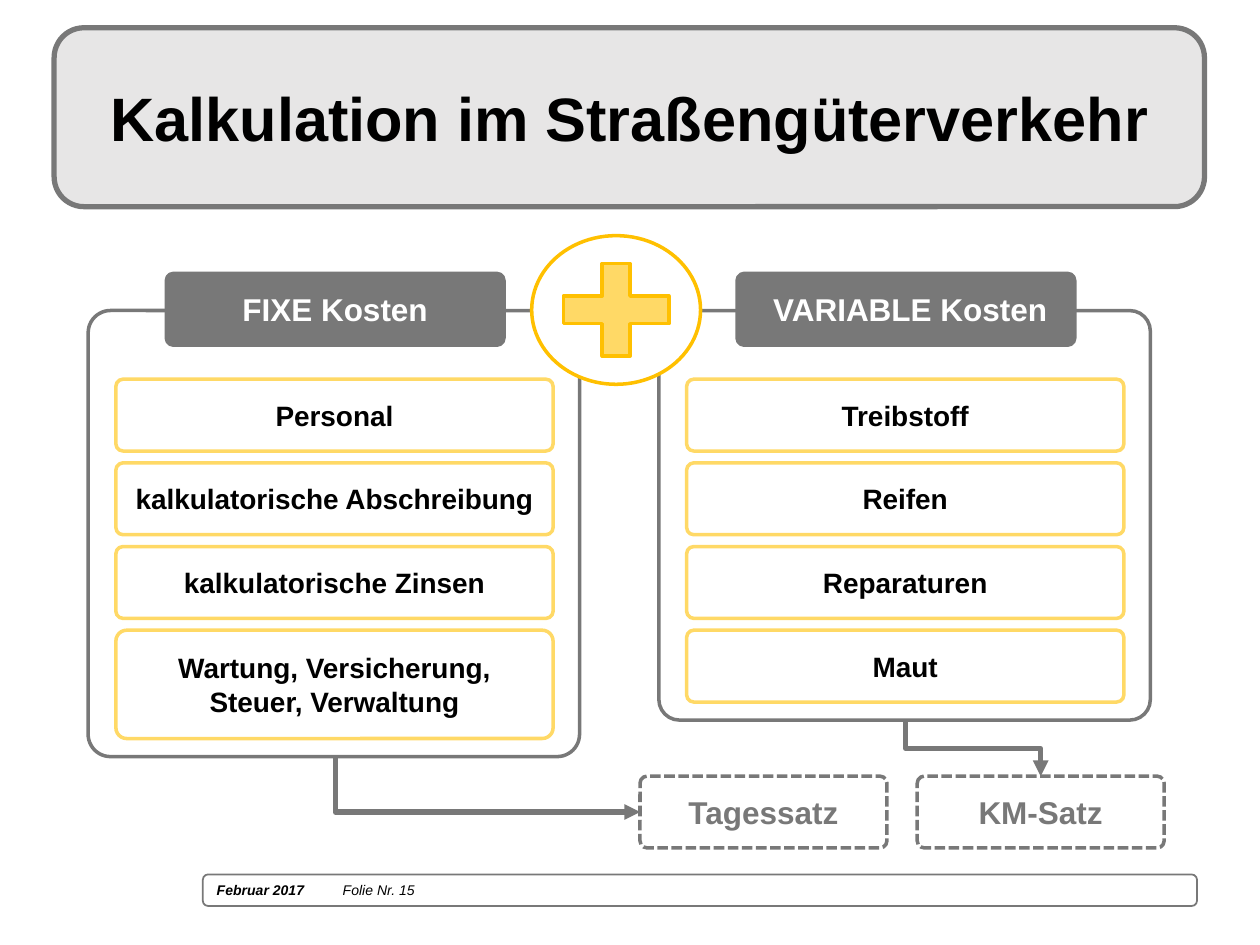
from lxml import etree
from pptx import Presentation
from pptx.dml.color import RGBColor
from pptx.enum.dml import MSO_LINE
from pptx.enum.shapes import MSO_CONNECTOR, MSO_SHAPE
from pptx.enum.text import MSO_ANCHOR, PP_ALIGN
from pptx.oxml.ns import qn
from pptx.util import Inches, Pt

WHITE = RGBColor(0xFF, 0xFF, 0xFF)
BLACK = RGBColor(0, 0, 0)
GREY = RGBColor(0x78, 0x78, 0x78)
PALE = RGBColor(0xE7, 0xE6, 0xE6)
YELLOW = RGBColor(0xFF, 0xD9, 0x66)
GOLD = RGBColor(0xFF, 0xC0, 0x00)
ROUNDED, OVAL, PLUS = (
    MSO_SHAPE.ROUNDED_RECTANGLE, MSO_SHAPE.OVAL, MSO_SHAPE.MATH_PLUS)
CENTER, LEFT, MIDDLE = PP_ALIGN.CENTER, PP_ALIGN.LEFT, MSO_ANCHOR.MIDDLE
DASHED = MSO_LINE.SQUARE_DOT
ELBOW = MSO_CONNECTOR.ELBOW

TITLE_ONLY = 5
COLUMNS, ROWS = 100, 75         # the slide as a grid of 0.1 inch cells
COLUMN_SHIFT = 45.3             # from the fixed to the variable costs
FIRST_ITEM, ITEM_STEP = 30.1, 6.64
ITEM_HEIGHT = 5.7
SMALL_CORNER, PANEL_CORNER = 0.1, 0.05


class CostSlide:
    def __init__(self):
        self.deck = Presentation()
        self.deck.slide_width, self.deck.slide_height = Inches(10), Inches(7.5)
        self.page = self.deck.slides.add_slide(
            self.deck.slide_layouts[TITLE_ONLY])
        self.font = {"name": "Arial", "bold": True}

    def across(self, columns):
        return round(self.deck.slide_width * columns / COLUMNS)

    def down(self, rows):
        return round(self.deck.slide_height * rows / ROWS)

    def area(self, left, top, width, height):
        return (self.across(left), self.down(top),
                self.across(width), self.down(height))

    def style(self, font, size, color, **values):
        for name, value in {**self.font, "size": Pt(size), **values}.items():
            setattr(font, name, value)
        font.color.rgb = color

    def box(self, place, fill=WHITE, line=GREY, weight=2, kind=ROUNDED,
            corner=None, dash=None, shapes=None):
        shapes = shapes or self.page.shapes
        box = shapes.add_shape(kind, *self.area(*place))
        box.shadow.inherit = False
        box.fill.solid()
        box.fill.fore_color.rgb = fill
        box.line.color.rgb = line
        box.line.width = Pt(weight)
        if dash:
            box.line.dash_style = dash
        if corner:
            box.adjustments[0] = corner
        return box

    def label(self, box, lines, size, color=BLACK):
        frame = box.text_frame
        for name, value in {"word_wrap": True, "vertical_anchor": MIDDLE,
                            "margin_left": Inches(0.05),
                            "margin_right": Inches(0.05)}.items():
            setattr(frame, name, value)
        for number, line in enumerate(lines):
            para = frame.add_paragraph() if number else frame.paragraphs[0]
            para.alignment = CENTER
            span = para.add_run()
            span.text = line
            self.style(span.font, size, color)

    def labelled(self, place, lines, size, color=BLACK, **look):
        box = self.box(place, corner=SMALL_CORNER, **look)
        self.label(box, lines, size, color)

    def title(self, text, place, behind):
        title = self.page.shapes.title
        title.left, title.top, title.width, title.height = self.area(*place)
        behind.element.addnext(title.element)
        self.label(title, [text], 35)

    def footer(self, place, date, number):
        box = self.box(place, weight=1)
        box.text_frame.vertical_anchor = MIDDLE
        para = box.text_frame.paragraphs[0]
        para.alignment = LEFT
        tabs = etree.SubElement(para._p.get_or_add_pPr(), qn("a:tabLst"))
        etree.SubElement(tabs, qn("a:tab"), pos=str(Inches(1)), algn="l")
        for text, bold in ((date + "\t", True), (number, False)):
            span = para.add_run()
            span.text = text
            self.style(span.font, 8, BLACK, bold=bold, italic=True)

    def elbow(self, start, end, preset):
        """Arrow that leaves downwards: a flipped elbow on a quarter turn."""
        x1, y1, x2, y2 = *start, *end
        half_long, half_short = (x2 - x1) / 2, (y2 - y1) / 2
        mid_x, mid_y = (x1 + x2) / 2, (y1 + y2) / 2
        arrow = self.page.shapes.add_connector(
            ELBOW,
            self.across(mid_x - half_short), self.down(mid_y - half_long),
            self.across(mid_x + half_short), self.down(mid_y + half_long))
        arrow.line.color.rgb = GREY
        arrow.line.width = Pt(3)
        properties = arrow.element.spPr
        frame = properties.find(qn("a:xfrm"))
        frame.set("rot", str(270 * 60000))
        frame.set("flipH", "1")
        properties.find(qn("a:prstGeom")).set("prst", preset)
        etree.SubElement(arrow.line._get_or_add_ln(), qn("a:tailEnd"),
                         type="triangle")
        etree.SubElement(properties, qn("a:effectLst"))

    def cost_column(self, shift, height, heading, items):
        self.box((7 + shift, 24.65, 39, height), corner=PANEL_CORNER)
        self.labelled((13.2 + shift, 21.7, 26.8, ITEM_HEIGHT), [heading],
                      18, WHITE, fill=GREY)
        for number, lines in enumerate(items):
            extra = 2.9 * (len(lines) - 1)
            self.labelled((9.2 + shift, FIRST_ITEM + number * ITEM_STEP,
                           34.7, ITEM_HEIGHT + extra),
                          lines, 16, line=YELLOW)

    def plus_sign(self):
        group = self.page.shapes.add_group_shape()
        self.box((42.2, 18.7, 13.4, 11.8), line=GOLD, kind=OVAL,
                 shapes=group.shapes)
        self.box((43.2, 19.6, 11.4, 10), fill=YELLOW, line=GOLD, kind=PLUS,
                 corner=0.22, shapes=group.shapes)


def main():
    slide = CostSlide()

    # Footer and title banner
    slide.footer((16.1, 69.4, 78.9, 2.5), "Februar 2017", "Folie Nr. 15")
    banner = slide.box((4.3, 2.2, 91.3, 14.2), fill=PALE, weight=3)
    slide.title("Kalkulation im Straßengüterverkehr", (5.9, 3, 88.2, 12.5),
                banner)

    # Fixed and variable costs, joined by a plus sign
    slide.cost_column(0, 35.4, "FIXE Kosten", [
        ["Personal"], ["kalkulatorische Abschreibung"],
        ["kalkulatorische Zinsen"],
        ["Wartung, Versicherung,", "Steuer, Verwaltung"]])
    slide.cost_column(COLUMN_SHIFT, 32.5, " VARIABLE Kosten", [
        ["Treibstoff"], ["Reifen"], ["Reparaturen"], ["Maut"]])
    slide.plus_sign()

    # Resulting rates
    for left, rate in ((50.8, "Tagessatz"), (72.8, "KM-Satz")):
        slide.labelled((left, 61.6, 19.6, ITEM_HEIGHT), [rate], 18, GREY,
                       dash=DASHED)
    slide.elbow((26.6, 60.1), (50.8, 64.45), "bentConnector2")
    slide.elbow((71.9, 57.2), (82.6, 61.6), "bentConnector3")

    slide.deck.save("out.pptx")


if __name__ == "__main__":
    main()
